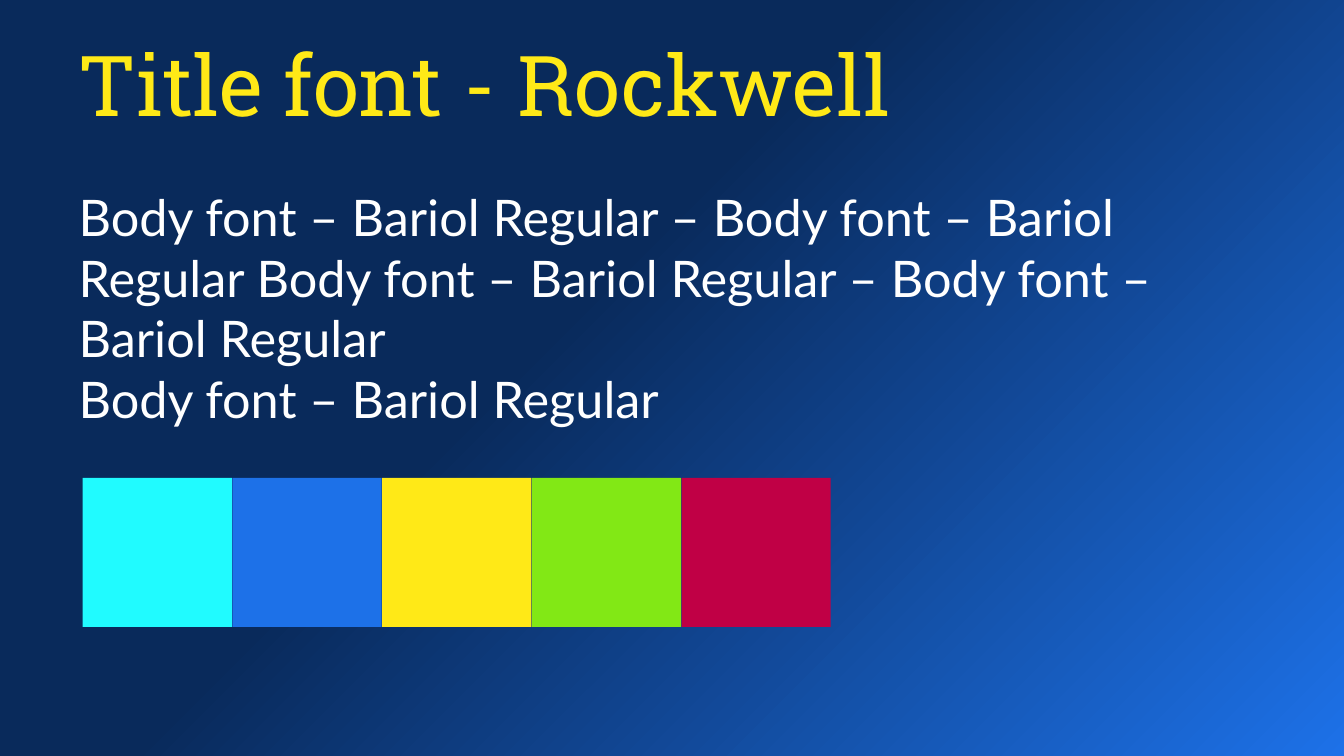
from lxml import etree
from pptx import Presentation
from pptx.dml.color import RGBColor
from pptx.enum.shapes import MSO_SHAPE
from pptx.enum.text import MSO_ANCHOR, MSO_AUTO_SIZE, PP_ALIGN
from pptx.oxml.ns import qn
from pptx.util import Inches, Pt

RECTANGLE = MSO_SHAPE.RECTANGLE
TOP, MIDDLE = MSO_ANCHOR.TOP, MSO_ANCHOR.MIDDLE
GROW = MSO_AUTO_SIZE.SHAPE_TO_FIT_TEXT
LEFT = PP_ALIGN.LEFT

CYAN, BLUE, YELLOW, GREEN, RED = "20FBFF", "1D71E8", "FFE917", "82E815", "C00045"
NAVY, WHITE = "092A5B", "FFFFFF"

TITLE = "Title font - Rockwell"
BODY = [
    "Body font – Bariol Regular – Body font – Bariol Regular "
    "Body font – Bariol Regular – Body font – Bariol Regular",
    "Body font – Bariol Regular",
]


def color(hex_code):
    return RGBColor.from_string(hex_code)


def paint_background(slide):
    """Radial gradient spreading from the bottom right corner."""
    fill = slide.background.fill
    fill.gradient()
    for stop, (position, shade) in zip(fill.gradient_stops, [(0, BLUE), (0.58, NAVY)]):
        stop.position = position
        stop.color.rgb = color(shade)
    gradient = slide.element.find(".//" + qn("a:gradFill"))
    gradient.remove(gradient.find(qn("a:lin")))
    circle = etree.SubElement(gradient, qn("a:path"), path="circle")
    etree.SubElement(circle, qn("a:fillToRect"), l="100000", t="100000")
    etree.SubElement(gradient, qn("a:tileRect"), r="-100000", b="-100000")


def fill_placeholder(placeholder, top, height, lines, font, size, shade, anchor):
    placeholder.left, placeholder.top = Inches(0.68), Inches(top)
    placeholder.width, placeholder.height = Inches(11.68), Inches(height)
    frame = placeholder.text_frame
    frame.text = "\n".join(lines)
    frame.word_wrap = True
    frame.auto_size = GROW
    frame.vertical_anchor = anchor
    for paragraph in frame.paragraphs:
        paragraph.alignment = LEFT
        paragraph.line_spacing = 1.0
        paragraph.space_before = Pt(0)
        paragraph.font.name = font
        paragraph.font.size = Pt(size)
        paragraph.font.color.rgb = color(shade)
        # Plain text without bullet or hanging indent
        properties = paragraph._p.get_or_add_pPr()
        properties.set("marL", "0")
        properties.set("indent", "0")
        properties.insert_element_before(
            etree.Element(qn("a:buNone")), "a:tabLst", "a:defRPr", "a:extLst")


def add_swatch(slide, left, shade):
    side = Inches(1.48)
    swatch = slide.shapes.add_shape(RECTANGLE, Inches(left), Inches(4.74), side, side)
    swatch.shadow.inherit = False
    swatch.fill.solid()
    swatch.fill.fore_color.rgb = color(shade)
    swatch.line.fill.background()


def main():
    presentation = Presentation()
    presentation.slide_width, presentation.slide_height = Inches(13.33), Inches(7.5)
    slide = presentation.slides.add_slide(presentation.slide_layouts[1])
    paint_background(slide)

    # Font samples
    fill_placeholder(slide.shapes.title, 0.27, 1.11, [TITLE],
                     "Roboto Slab", 60, YELLOW, MIDDLE)
    fill_placeholder(slide.placeholders[1], 1.8, 3.13, BODY,
                     "Lato", 36, WHITE, TOP)

    # Palette
    for column, shade in enumerate([CYAN, BLUE, YELLOW, GREEN, RED]):
        add_swatch(slide, 0.82 + column * 1.485, shade)

    presentation.save("out.pptx")


if __name__ == "__main__":
    main()
